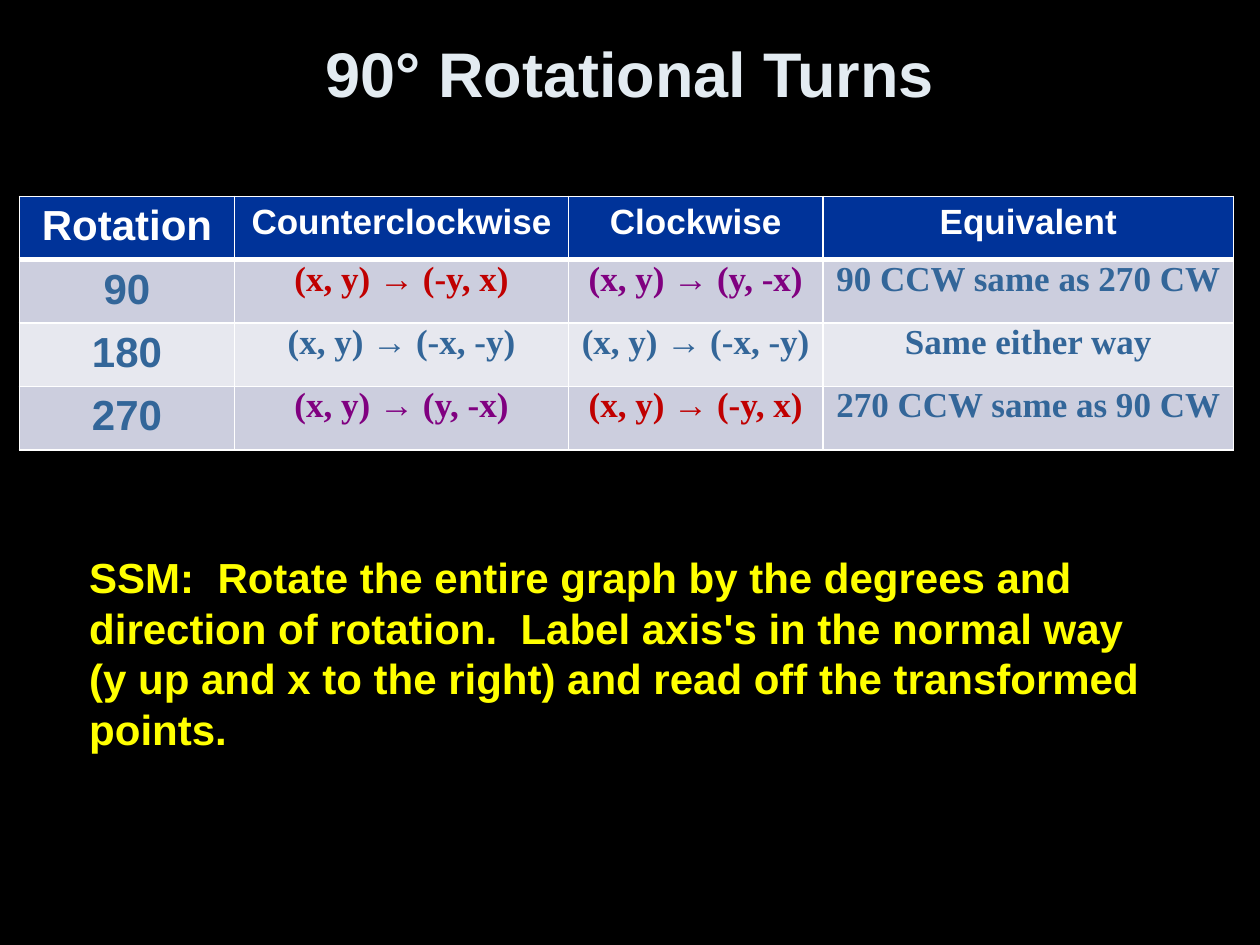
from lxml import etree
from pptx import Presentation
from pptx.dml.color import RGBColor
from pptx.enum.text import MSO_ANCHOR, PP_ALIGN
from pptx.oxml.ns import qn
from pptx.util import Cm, Pt

CENTER, LEFT = PP_ALIGN.CENTER, PP_ALIGN.LEFT
MIDDLE = MSO_ANCHOR.MIDDLE
SANS, SERIF = "Arial", "Times New Roman"
HEX = {
    "black": "000000", "white": "FFFFFF", "pale": "E3EBF1", "yellow": "FFFF00",
    "navy": "003399", "blue": "336699", "red": "C00000", "purple": "800080",
    "dark": "CCCEDE", "light": "E7E8EF",
}


def write(frame, text, size, color, font=SANS, align=CENTER):
    """Fill a text frame with one bold paragraph."""
    frame.word_wrap = True
    para = frame.paragraphs[0]
    para.text = text
    para.alignment = align
    style = para.runs[0].font
    style.name, style.size, style.bold = font, Pt(size), True
    style.color.rgb = RGBColor.from_string(HEX[color])


def add_edge(cell, side, width):
    """Draw a white border on one side (L, R, T or B) of a cell."""
    props = cell._tc.get_or_add_tcPr()
    line = etree.SubElement(props, qn(f"a:ln{side}"), w=str(Pt(width)))
    fill = etree.SubElement(line, qn("a:solidFill"))
    etree.SubElement(fill, qn("a:srgbClr"), val=HEX["white"])


deck = Presentation()
deck.slide_width, deck.slide_height = Cm(25.4), Cm(19.05)
slide = deck.slides.add_slide(deck.slide_layouts[6])
back = slide.background.fill
back.solid()
back.fore_color.rgb = RGBColor.from_string(HEX["black"])

title = slide.shapes.add_textbox(Cm(1.27), Cm(0.28), Cm(22.86), Cm(2.36))
title.text_frame.vertical_anchor = MIDDLE
write(title.text_frame, "90° Rotational Turns", 36, "pale")

# Each body cell is its text and its colour
NEG_Y = ("(x, y) → (-y, x)", "red")
NEG_X = ("(x, y) → (y, -x)", "purple")
BOTH = ("(x, y) → (-x, -y)", "blue")
heads = ["Rotation", "Counterclockwise", "Clockwise", "Equivalent"]
rows = [
    [(head, "white") for head in heads],
    [("90", "blue"), NEG_Y, NEG_X, ("90 CCW same as 270 CW", "blue")],
    [("180", "blue"), BOTH, BOTH, ("Same either way", "blue")],
    [("270", "blue"), NEG_X, NEG_Y, ("270 CCW same as 90 CW", "blue")],
]
bands = ["navy", "dark", "light", "dark"]
widths = [4.34, 6.73, 5.13, 8.28]
high = 1.2

table = slide.shapes.add_table(
    len(rows), len(widths), Cm(0.39), Cm(3.96),
    Cm(sum(widths)), Cm(high * len(rows))).table
for col, width in zip(table.columns, widths):
    col.width = Cm(width)

for r, row in enumerate(rows):
    table.rows[r].height = Cm(high)
    for c, (text, color) in enumerate(row):
        cell = table.cell(r, c)
        rule = r > 0 and c > 0
        cell.margin_left = cell.margin_right = Cm(0.19 if rule else 0.25)
        cell.margin_top = cell.margin_bottom = Cm(0 if rule else 0.13)
        for side in "LRTB":
            thick = (r, side) in ((0, "B"), (1, "T"))
            add_edge(cell, side, 3 if thick else 1)
        cell.fill.solid()
        cell.fill.fore_color.rgb = RGBColor.from_string(HEX[bands[r]])
        write(cell.text_frame, text, 20 if c else 24, color,
              SERIF if rule else SANS)

note = slide.shapes.add_textbox(Cm(1.55), Cm(11), Cm(22.12), Cm(4.37))
write(note.text_frame,
      "SSM:  Rotate the entire graph by the degrees and direction of rotation.  "
      "Label axis's in the normal way (y up and x to the right) and read off "
      "the transformed points.", 24, "yellow", align=LEFT)

deck.save("out.pptx")
